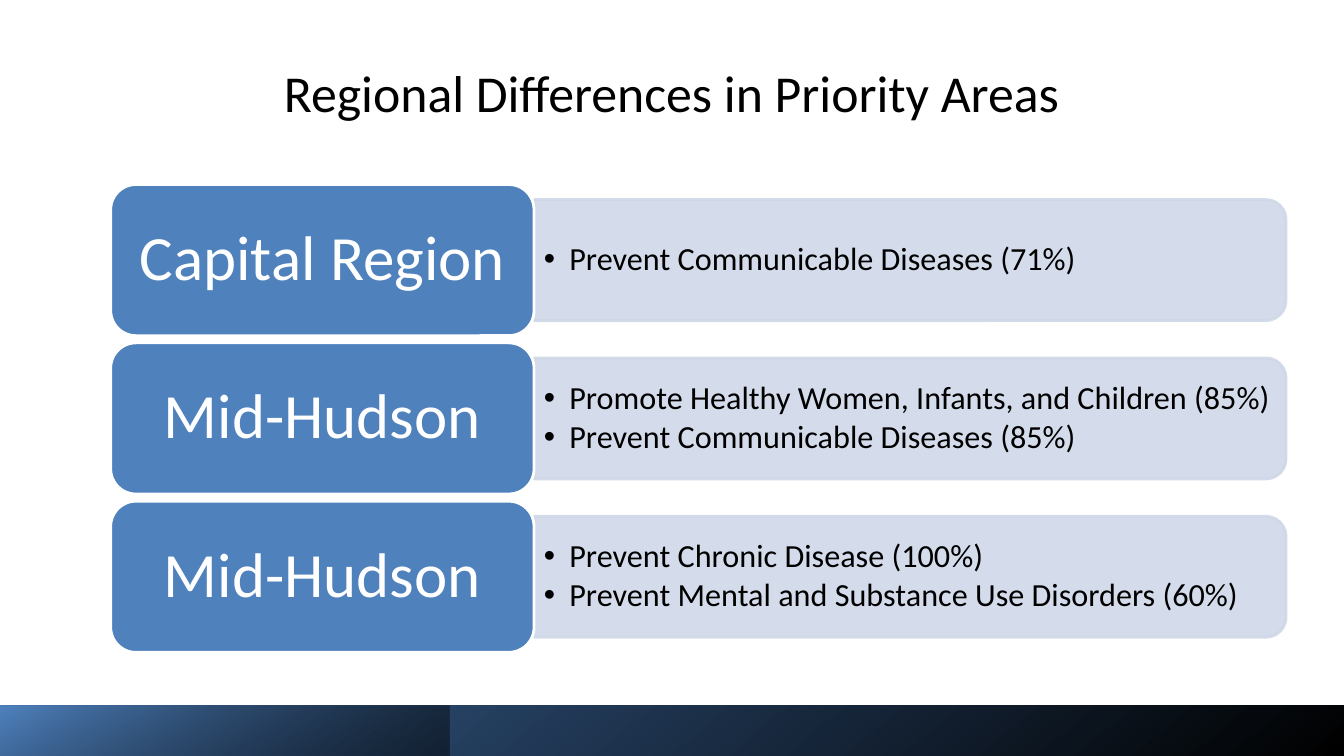
from dataclasses import dataclass
from typing import Any, NamedTuple

from lxml.etree import SubElement
from pptx import Presentation
from pptx.dml.color import RGBColor as RGB
from pptx.enum.shapes import MSO_SHAPE as Shp
from pptx.enum.text import MSO_ANCHOR as Anchor, PP_ALIGN as Align
from pptx.oxml.ns import qn
from pptx.util import Cm, Pt


@dataclass(frozen=True)
class Theme:
    font: str = "Calibri"
    black: str = "000000"
    white: str = "FFFFFF"
    blue: str = "4F81BD"
    navy: str = "376092"
    pale: str = "D0D8E8"
    title: float = 37
    label: float = 45
    body: float = 23
    outline: float = 2


class Box(NamedTuple):
    x: float
    y: float
    w: float
    h: float

    def emu(self) -> tuple[Cm, ...]:
        return tuple(Cm(v) for v in self)

    def upright(self) -> "Box":
        shift = (self.w - self.h) / 2
        return Box(self.x + shift, self.y - shift, self.h, self.w)


class Stop(NamedTuple):
    position: float
    color: str


class Region(NamedTuple):
    name: str
    priorities: tuple[str, ...]


class Band(NamedTuple):
    width: float
    angle: float
    stops: tuple[Stop, Stop]
    dark_opacity: int


T = Theme()
WIDTH, HEIGHT = 33.87, 19.05
ROW_TOP, ROW_STEP = 4.65, 3.99
LABEL_X, LABEL_W, LABEL_H = 2.79, 10.67, 3.81
BAR_W, BAR_H = 18.95, 3.05
BAND_TOP, BAND_H = 17.77, 1.28
INDENT = 0.64

REGIONS = (
    Region("Capital Region", ("Prevent Communicable Diseases (71%)",)),
    Region("Mid-Hudson", ("Promote Healthy Women, Infants, and Children (85%)",
                          "Prevent Communicable Diseases (85%)")),
    Region("Mid-Hudson", ("Prevent Chronic Disease (100%)",
                          "Prevent Mental and Substance Use Disorders (60%)")),
)
BANDS = (
    Band(WIDTH, 130, (Stop(0, T.black), Stop(1, T.navy)), 100),
    Band(11.33, 120, (Stop(0, T.black), Stop(0.99, T.blue)), 46),
)


def apply(target: Any, formats: dict[str, Any]) -> None:
    for name, value in formats.items():
        setattr(target, name, value)


def set_opacity(sp: Any, color: str, percent: int) -> None:
    for clr in sp._element.spPr.iter(qn("a:srgbClr")):
        if clr.get("val") == color and percent < 100:
            SubElement(clr, qn("a:alpha")).set("val", str(percent * 1000))


def add_bullet(p: Any) -> None:
    pPr = p._p.get_or_add_pPr()
    apply_indent = {"marL": Cm(INDENT), "indent": -Cm(INDENT)}
    for name, value in apply_indent.items():
        pPr.set(name, str(int(value)))
    SubElement(pPr, qn("a:buFont")).set("typeface", "Arial")
    SubElement(pPr, qn("a:buChar")).set("char", "•")


def write(sp: Any, lines: tuple[str, ...], size: float, color: str,
          paragraph: dict[str, Any], inset: float, bullets: bool = False) -> None:
    tf = sp.text_frame
    apply(tf, {"word_wrap": True, "vertical_anchor": Anchor.MIDDLE,
               "margin_left": Cm(0.25), "margin_right": Cm(inset),
               "margin_top": Cm(0.13), "margin_bottom": Cm(0.13)})
    for i, line in enumerate(lines):
        p = tf.paragraphs[0] if i == 0 else tf.add_paragraph()
        apply(p, paragraph)
        if bullets:
            add_bullet(p)
        r = p.add_run()
        r.text = line
        apply(r.font, {"name": T.font, "size": Pt(size)})
        r.font.color.rgb = RGB.from_string(color)


def add_panel(s: Any, kind: Shp, box: Box, fill: str, line: str) -> Any:
    sp = s.shapes.add_shape(kind, *box.emu())
    sp.shadow.inherit = False
    sp.fill.solid()
    sp.fill.fore_color.rgb = RGB.from_string(fill)
    sp.line.color.rgb = RGB.from_string(line)
    sp.line.width = Pt(T.outline)
    return sp


def add_band(s: Any, band: Band) -> None:
    box = Box(0, BAND_TOP, band.width, BAND_H)
    sp = s.shapes.add_shape(Shp.RECTANGLE, *box.emu())
    sp.shadow.inherit = False
    sp.line.fill.background()
    sp.fill.gradient()
    sp.fill.gradient_angle = band.angle
    for target, stop in zip(sp.fill.gradient_stops, band.stops):
        target.position = stop.position
        target.color.rgb = RGB.from_string(stop.color)
    set_opacity(sp, T.black, band.dark_opacity)


def add_region(s: Any, region: Region, top: float) -> None:
    bar_box = Box(LABEL_X + LABEL_W, top + (LABEL_H - BAR_H) / 2, BAR_W, BAR_H)
    bar = add_panel(s, Shp.ROUND_2_SAME_RECTANGLE, bar_box.upright(), T.pale, T.pale)
    bar.rotation = 90
    set_opacity(bar, T.pale, 90)

    text = s.shapes.add_textbox(*bar_box.emu())
    write(text, region.priorities, T.body, T.black,
          {"alignment": Align.LEFT, "line_spacing": 0.9, "space_after": Pt(3)},
          inset=0, bullets=True)

    label_box = Box(LABEL_X, top, LABEL_W, LABEL_H)
    label = add_panel(s, Shp.ROUNDED_RECTANGLE, label_box, T.blue, T.white)
    write(label, (region.name,), T.label, T.white,
          {"alignment": Align.CENTER, "line_spacing": 0.9}, inset=0.25)


def main() -> None:
    prs = Presentation()
    apply(prs, {"slide_width": Cm(WIDTH), "slide_height": Cm(HEIGHT)})
    s = prs.slides.add_slide(prs.slide_layouts[6])

    title = s.shapes.add_textbox(*Box(2.79, 0.79, 28.27, 3.05).emu())
    write(title, ("Regional Differences in Priority Areas",), T.title, T.black,
          {"alignment": Align.CENTER}, inset=0.25)
    for band in BANDS:
        add_band(s, band)
    for i, region in enumerate(REGIONS):
        add_region(s, region, ROW_TOP + i * ROW_STEP)
    prs.save("out.pptx")


if __name__ == "__main__":
    main()
